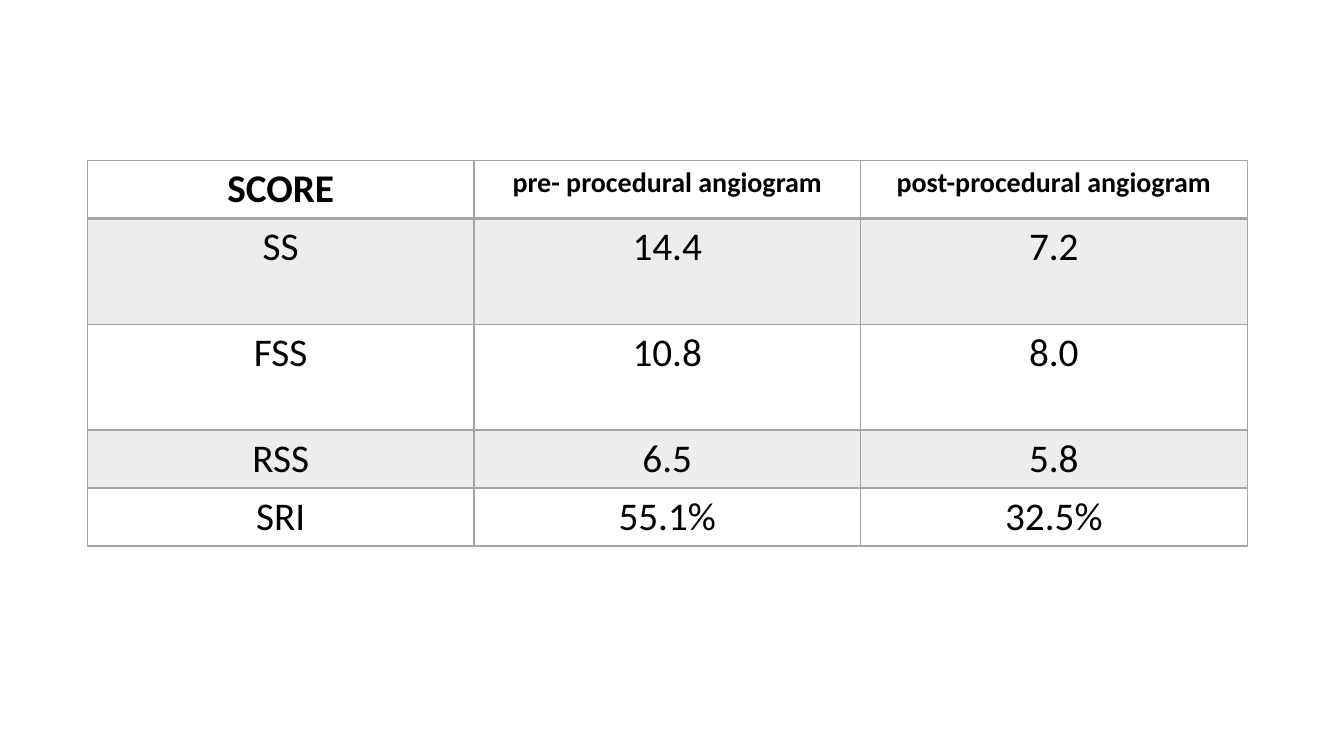
from lxml.etree import SubElement
from pptx import Presentation
from pptx.dml.color import RGBColor
from pptx.enum.text import PP_ALIGN
from pptx.oxml.ns import qn
from pptx.util import Inches, Pt

BLACK = RGBColor(0x00, 0x00, 0x00)
GREY = RGBColor(0xA5, 0xA5, 0xA5)
BAND = RGBColor(0xED, 0xED, 0xED)
WIDE, HIGH = Inches(13.33), Inches(7.5)
TALL, LOW = 0.14, 0.076

SCORES = [
    ("SCORE", "pre- procedural angiogram", "post-procedural angiogram"),
    ("SS", "14.4", "7.2"),
    ("FSS", "10.8", "8.0"),
    ("RSS", "6.5", "5.8"),
    ("SRI", "55.1%", "32.5%"),
]
ROWS = [LOW, TALL, TALL, LOW, LOW]


def write(frame, text, size=28, bold=False, color=BLACK, font="Calibri"):
    para = frame.paragraphs[0]
    para.alignment = PP_ALIGN.CENTER
    run = para.add_run()
    run.text = text
    run.font.name = font
    run.font.size = Pt(size)
    run.font.bold = bold
    run.font.color.rgb = color


class Deck:
    """Holds the style and the current slide; lengths are shares of its size."""

    def __init__(self, show):
        self.slide = show.slides.add_slide(show.slide_layouts[6])
        self.line = GREY
        self.band = BAND

    def edge(self, cell, side, width):
        props = cell._tc.get_or_add_tcPr()
        line = SubElement(props, qn(f"a:ln{side}"), w=str(Pt(width)))
        fill = SubElement(line, qn("a:solidFill"))
        SubElement(fill, qn("a:srgbClr"), val=str(self.line))

    def cell(self, cell, text, row, col):
        head = row == 0
        write(cell.text_frame, text, size=20 if head and col else 28, bold=head)
        widths = {"L": 1, "R": 1, "T": 2 if row == 1 else 1, "B": 2 if head else 1}
        for side, width in widths.items():
            self.edge(cell, side, width)
        if row % 2:
            cell.fill.solid()
            cell.fill.fore_color.rgb = self.band
        else:
            cell.fill.background()

    def table(self, data, rows, left, top, width):
        frame = self.slide.shapes.add_table(
            len(data), len(data[0]), int(left * WIDE), int(top * HIGH),
            int(width * WIDE), int(sum(rows) * HIGH))
        grid = frame.table
        for row, (line, share) in enumerate(zip(data, rows)):
            grid.rows[row].height = int(share * HIGH)
            for col, text in enumerate(line):
                self.cell(grid.cell(row, col), text, row, col)


def main():
    show = Presentation()
    show.slide_width, show.slide_height = WIDE, HIGH
    deck = Deck(show)
    deck.table(SCORES, ROWS, left=0.065, top=0.212, width=0.863)
    show.save("out.pptx")


if __name__ == "__main__":
    main()
